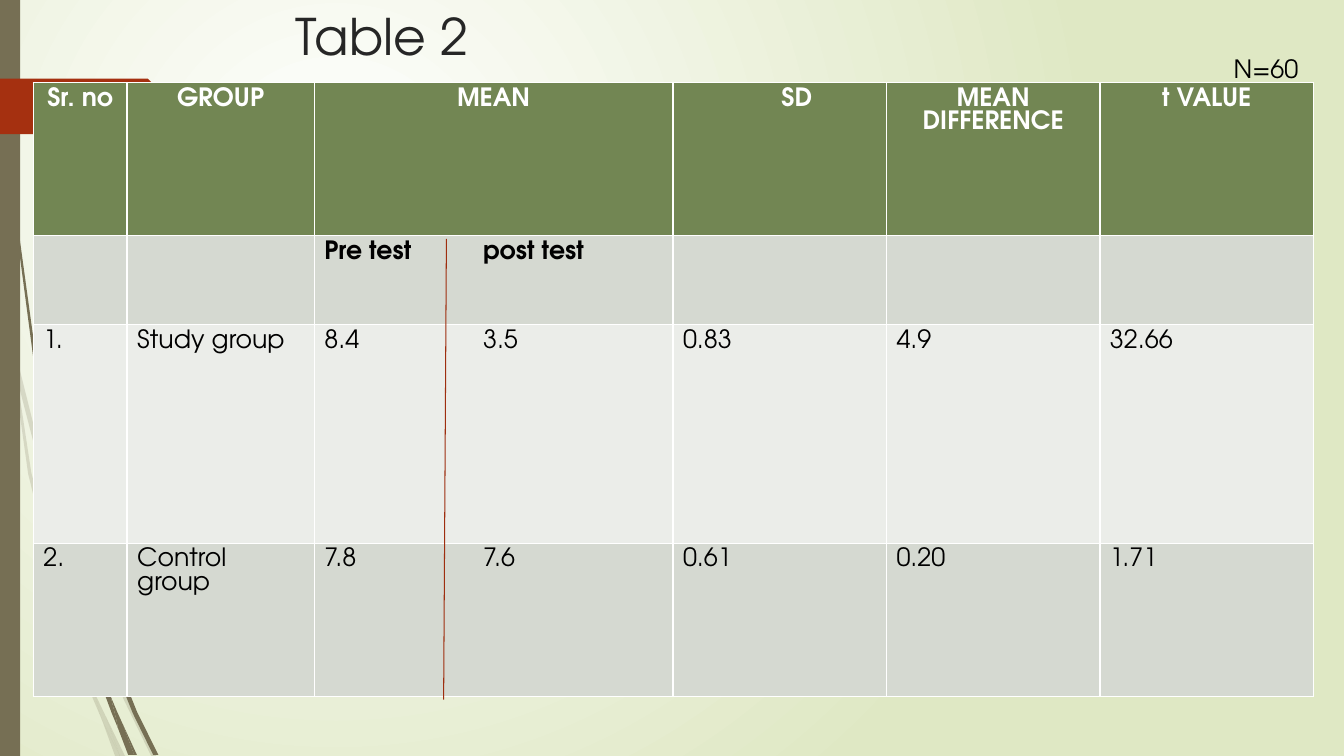
"""Build the slide with Table 2, comparing pre-test and post-test results."""
from dataclasses import dataclass

from lxml.etree import SubElement
from pptx import Presentation
from pptx.dml.color import RGBColor
from pptx.enum.shapes import MSO_CONNECTOR, MSO_SHAPE
from pptx.enum.text import PP_ALIGN
from pptx.oxml.ns import qn
from pptx.slide import Slide
from pptx.util import Cm, Pt

FONT = "TeX Gyre Adventor"
BROWN, RED, GREEN = "766F54", "A53010", "728653"
BLACK, WHITE = "000000", "FFFFFF"
COLUMN_WIDTHS = [2.36, 4.72, 9.04, 5.38, 5.38, 5.38]
SD_COLUMN = 3


@dataclass
class Wisp:
    points: list[tuple[float, float]]
    opacity: int = 100


@dataclass
class Label:
    text: str
    left: float
    top: float
    width: float
    height: float
    size: int
    color: str
    wrap: bool


@dataclass
class TableRow:
    height: float
    fill: str
    texts: list[str]
    color: str = BLACK
    bold: bool = False
    alignment: PP_ALIGN = PP_ALIGN.LEFT


WISPS = [
    Wisp([(2.36, 17.35), (1.78, 15.72), (0.79, 11.91), (0.43, 9.55), (0.28, 8.89), (0.71, 11.94),
          (1.65, 15.77), (2.34, 17.6), (2.57, 18.14), (2.51, 17.96)], 20),
    Wisp([(1.47, 13.26), (2.13, 15.21), (2.16, 14.88), (1.57, 13.21), (0.92, 11), (0.36, 8.76),
          (0.43, 9.55), (0.91, 11.4)], 20),
    Wisp([(2.34, 15.42), (2.24, 15.14), (2.24, 15.49), (3.12, 17.63), (3.81, 19.05), (3.94, 19.05),
          (3.23, 17.58)], 20),
    Wisp([(3.02, 19.05), (3.15, 19.05), (2.67, 18.06)], 20),
    Wisp([(2.57, 18.14), (2.9, 19.05), (3.02, 19.05)], 20),
    Wisp([(2.44, 17.58), (2.36, 17.35), (2.51, 17.96), (2.57, 18.14), (3.02, 19.05), (2.67, 18.06)], 20),
    Wisp([(0.18, 2.79), (0.43, 5.92), (0.84, 9.02), (1.42, 12.12), (1.45, 12.22), (1.4, 11.51),
          (0.91, 9.02), (0.48, 5.89), (0.2, 2.77), (0.1, 0), (0.08, 0)]),
    Wisp([(2.87, 16.48), (2.79, 16.28), (2.82, 16.66), (3.35, 17.98), (3.86, 19.02), (3.99, 19.02),
          (3.45, 17.93)]),
    Wisp([(2.79, 17.55), (2.49, 16.69), (1.83, 14.12), (1.63, 12.83), (1.45, 12.12), (1.73, 14.15),
          (2.36, 16.74), (2.82, 17.98), (2.97, 18.34), (2.95, 18.21)]),
    Wisp([(3.38, 19.02), (3.45, 19.02), (3.1, 18.26)]),
    Wisp([(2.97, 18.34), (3.23, 19.02), (3.33, 19.02)]),
    Wisp([(2.95, 17.93), (2.79, 17.55), (2.95, 18.21), (2.97, 18.34), (3.3, 19.02), (3.38, 19.02),
          (3.1, 18.26)]),
]
LABELS = [
    Label("Table 2", 7.21, 0, 24.77, 2.44, 36, "262626", True),
    Label("N=60", 30.84, 1.22, 2.26, 1.02, 18, BLACK, False),
]
ROWS = [
    TableRow(3.86, GREEN, ["Sr. no", "GROUP", "MEAN", "SD", "MEAN DIFFERENCE", "t VALUE"],
             WHITE, True, PP_ALIGN.CENTER),
    TableRow(2.24, "D5D9D1", ["", "", "Pre test\tpost test", "", "", ""], bold=True),
    TableRow(5.51, "EBEDE9", ["1.", "Study group", "8.4\t3.5", "0.83", "4.9", "32.66"]),
    TableRow(3.86, "D5D9D1", ["2.", "Control group", "7.8\t7.6", "0.61", "0.20", "1.71"]),
]


def rgb(value: str) -> RGBColor:
    return RGBColor.from_string(value)


def format_text(paragraph, size: int, color: str, bold: bool = False) -> None:
    for run in paragraph.runs:
        run.font.name = FONT
        run.font.size = Pt(size)
        run.font.bold = bold
        run.font.color.rgb = rgb(color)


def paint(shape, color: str) -> None:
    shape.shadow.inherit = False
    shape.fill.solid()
    shape.fill.fore_color.rgb = rgb(color)
    shape.line.fill.background()


def paint_background(slide: Slide) -> None:
    fill = slide.background.fill
    fill.gradient()
    for stop, color, position in zip(fill.gradient_stops, (WHITE, "DFE8C4"), (0, 1)):
        stop.color.rgb = rgb(color)
        stop.position = position
    gradient = next(slide.element.iter(qn("a:gradFill")))
    gradient.remove(gradient.find(qn("a:lin")))
    circle = SubElement(gradient, qn("a:path"), {"path": "circle"})
    SubElement(circle, qn("a:fillToRect"), {"l": "50000", "t": "50000", "r": "100000", "b": "100000"})


def draw_wisp(slide: Slide, wisp: Wisp) -> None:
    start, *others = [(Cm(x), Cm(y)) for x, y in wisp.points]
    builder = slide.shapes.build_freeform(*start, scale=1.0)
    builder.add_line_segments(others, close=True)
    shape = builder.convert_to_shape()
    paint(shape, BROWN)
    if wisp.opacity < 100:
        color = next(shape.element.spPr.iter(qn("a:srgbClr")))
        SubElement(color, qn("a:alpha"), {"val": str(wisp.opacity * 1000)})


def draw_label(slide: Slide, label: Label) -> None:
    shape = slide.shapes.add_textbox(Cm(label.left), Cm(label.top), Cm(label.width), Cm(label.height))
    shape.text_frame.word_wrap = label.wrap
    shape.text_frame.text = label.text
    format_text(shape.text_frame.paragraphs[0], label.size, label.color)


def draw_table(slide: Slide) -> None:
    width, height = sum(COLUMN_WIDTHS), sum(row.height for row in ROWS)
    table = slide.shapes.add_table(len(ROWS), len(COLUMN_WIDTHS), Cm(0.84), Cm(2.08),
                                   Cm(width), Cm(height)).table
    for column, column_width in zip(table.columns, COLUMN_WIDTHS):
        column.width = Cm(column_width)
    for row_index, row in enumerate(ROWS):
        table.rows[row_index].height = Cm(row.height)
        for column_index, text in enumerate(row.texts):
            cell = table.cell(row_index, column_index)
            cell.fill.solid()
            cell.fill.fore_color.rgb = rgb(row.fill)
            paragraph = cell.text_frame.paragraphs[0]
            paragraph.text = text
            paragraph.alignment = row.alignment
            format_text(paragraph, 18, row.color, row.bold)
            properties = paragraph._p.get_or_add_pPr()
            if "\t" in text:
                tabs = SubElement(properties, qn("a:tabLst"))
                SubElement(tabs, qn("a:tab"), {"pos": str(Cm(4)), "algn": "l"})
            if row_index == 0 and column_index == SD_COLUMN:
                properties.set("marL", str(Cm(0.86)))


def draw_divider(slide: Slide) -> None:
    divider = slide.shapes.add_connector(MSO_CONNECTOR.STRAIGHT, Cm(11.25), Cm(6.02), Cm(11.18), Cm(17.63))
    divider.line.color.rgb = rgb("9E2E0F")
    divider.line.width = Pt(0.75)
    SubElement(divider.element.spPr, qn("a:effectLst"))


def main() -> None:
    presentation = Presentation()
    presentation.slide_width, presentation.slide_height = Cm(33.87), Cm(19.05)
    slide = presentation.slides.add_slide(presentation.slide_layouts[6])
    paint_background(slide)
    for wisp in WISPS:
        draw_wisp(slide, wisp)
    paint(slide.shapes.add_shape(MSO_SHAPE.RECTANGLE, 0, 0, Cm(0.51), Cm(19.05)), BROWN)
    paint(slide.shapes.add_shape(MSO_SHAPE.PENTAGON, 0, Cm(1.98), Cm(4.42), Cm(1.4)), RED)
    draw_table(slide)
    draw_divider(slide)
    for label in LABELS:
        draw_label(slide, label)
    presentation.save("out.pptx")


if __name__ == "__main__":
    main()
